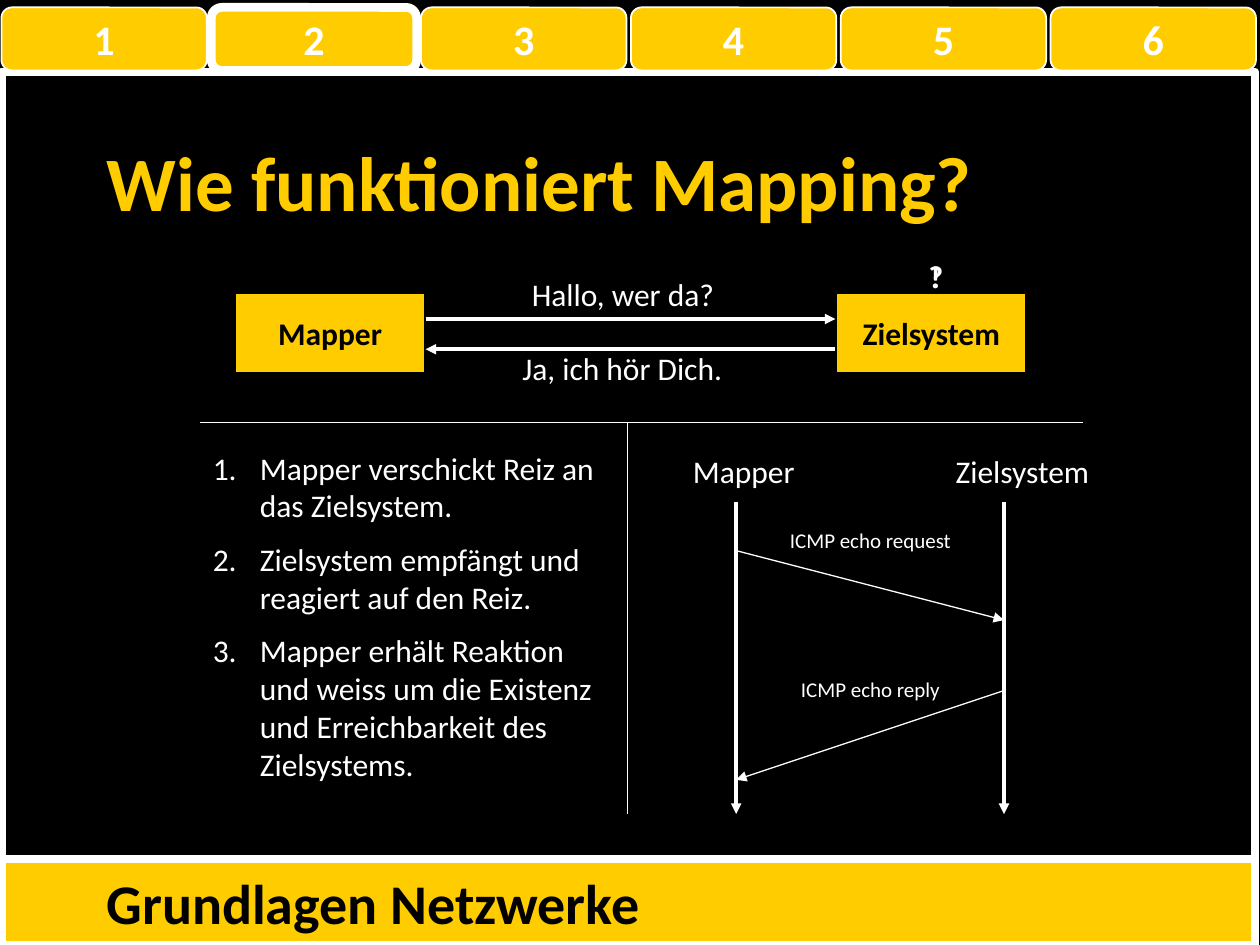
from lxml.etree import SubElement
from pptx import Presentation
from pptx.dml.color import RGBColor
from pptx.enum.shapes import MSO_CONNECTOR, MSO_SHAPE
from pptx.enum.text import MSO_ANCHOR, PP_ALIGN
from pptx.oxml.ns import qn
from pptx.util import Cm, Pt

COLORS = {"black": "000000", "white": "FFFFFF", "yellow": "FFCC00"}
FONT = "Calibri"

# Content; all places in cm: left, top, width, height
TITLE = "Wie funktioniert Mapping?"
FOOTER = "Grundlagen Netzwerke"
TABS = ["1", "2", "3", "4", "5", "6"]
ACTIVE_TAB = "2"
SYSTEMS = [("Mapper", 4.75), ("Zielsystem", 16.87)]
STEPS = [
    "Mapper verschickt Reiz an das Zielsystem.",
    "Zielsystem empfängt und reagiert auf den Reiz.",
    "Mapper erhält Reaktion und weiss um die Existenz "
    "und Erreichbarkeit des Zielsystems.",
]
LABELS = [
    ("Hallo, wer da?", 18, False, (10.26, 5.41, 4.6, 1.02)),
    ("Ja, ich hör Dich.", 18, False, (9.8, 6.91, 5.49, 1.02)),
    ("?", 18, True, (18.47, 5.05, 0.79, 1.02)),
    ("!", 18, True, (18.47, 5.05, 0.79, 1.02)),
    ("Mapper", 18, False, (13.51, 8.99, 2.97, 1.02)),
    ("Zielsystem", 18, False, (18.82, 8.99, 3.58, 1.02)),
    ("ICMP echo request", 12, False, (14.86, 10.52, 5.38, 0.76)),
    ("ICMP echo reply", 12, False, (14.86, 13.51, 5.38, 0.76)),
]
MAPPER_X, TARGET_X = 14.84, 20.24
RULE_Y, LIFELINE_Y, BOTTOM_Y = 8.51, 10.11, 16.41
# start x, start y, end x, end y, line width, arrowhead
LINES = [
    (8.58, 6.43, 16.84, 6.43, 2, True),
    (16.84, 7.04, 8.58, 7.04, 2, True),
    (4.04, RULE_Y, 21.84, RULE_Y, 0.75, False),
    (12.65, RULE_Y, 12.65, BOTTOM_Y, 0.75, False),
    (MAPPER_X, LIFELINE_Y, MAPPER_X, BOTTOM_Y, 2, True),
    (TARGET_X, LIFELINE_Y, TARGET_X, BOTTOM_Y, 2, True),
    (MAPPER_X, 11.1, TARGET_X, 12.5, 0.75, True),
    (TARGET_X, 13.92, MAPPER_X, 15.72, 0.75, True),
]

deck = Presentation()
deck.slide_width, deck.slide_height = Cm(25.4), Cm(19.05)
page = deck.slides.add_slide(deck.slide_layouts[6])


def color(name):
    return RGBColor.from_string(COLORS[name])


def write(shape, *texts, size=18, ink="white", bold=False, align=PP_ALIGN.CENTER,
          anchor=MSO_ANCHOR.TOP, wrap=True, numbered=False):
    frame = shape.text_frame
    frame.word_wrap, frame.vertical_anchor = wrap, anchor
    for index, text in enumerate(texts):
        para = frame.add_paragraph() if index else frame.paragraphs[0]
        para.alignment = align
        span = para.add_run()
        span.text = text
        font = span.font
        font.name, font.size, font.bold = FONT, Pt(size), bold
        font.color.rgb = color(ink)
        if numbered:
            para.space_before = Pt(size / 2)
            props = para._p.get_or_add_pPr()
            props.set("marL", str(Cm(0.95)))
            props.set("indent", str(-Cm(0.95)))
            SubElement(props, qn("a:buFont"), typeface="+mj-lt")
            SubElement(props, qn("a:buAutoNum"), type="arabicPeriod")


def add_box(place, kind=MSO_SHAPE.RECTANGLE, fill="yellow", line="white", width=5):
    box = page.shapes.add_shape(kind, *map(Cm, place))
    box.shadow.inherit = False
    if fill:
        box.fill.solid()
        box.fill.fore_color.rgb = color(fill)
    else:
        box.fill.background()
    box.line.color.rgb = color(line)
    box.line.width = Pt(width)
    return box


def add_label(place, *texts, **style):
    write(page.shapes.add_textbox(*map(Cm, place)), *texts, **style)


def add_line(x1, y1, x2, y2, width, arrow):
    line = page.shapes.add_connector(MSO_CONNECTOR.STRAIGHT, *map(Cm, (x1, y1, x2, y2)))
    line.line.color.rgb = color("white")
    line.line.width = Pt(width)
    if arrow:
        SubElement(line.line._get_or_add_ln(), qn("a:tailEnd"), type="triangle")
    SubElement(line._element.spPr, qn("a:effectLst"))


# Background, frame and title
page.background.fill.solid()
page.background.fill.fore_color.rgb = color("black")
add_box((0.03, 17.32, 25.27, 1.73))
add_box((0.03, 1.45, 25.27, 15.87), fill=None)
add_label((1.9, 2.08, 18.26, 3.12), TITLE, size=44, ink="yellow", bold=True,
          align=PP_ALIGN.LEFT, anchor=MSO_ANCHOR.MIDDLE)

# The two systems
for name, left in SYSTEMS:
    write(add_box((left, 5.92, 3.81, 1.6), line="black", width=0.75), name,
          ink="black", bold=True, anchor=MSO_ANCHOR.MIDDLE, wrap=False)

# Arrows, rules, labels and steps
for line in LINES:
    add_line(*line)
for text, size, bold, place in LABELS:
    add_label(place, text, size=size, bold=bold)
add_label((4.04, 8.92, 8.2, 8.66), *STEPS, align=PP_ALIGN.LEFT, numbered=True)

# Footer and tabs
add_label((1.9, 17.32, 21.59, 1.73), FOOTER, size=32, ink="black", bold=True,
          align=PP_ALIGN.LEFT, anchor=MSO_ANCHOR.MIDDLE)
TAB_PITCH = 4.23
for index, number in enumerate(TABS):
    tab = add_box((0.03 + index * TAB_PITCH, 0.15, 4.14, 1.27),
                  MSO_SHAPE.ROUNDED_RECTANGLE, width=5 if number == ACTIVE_TAB else 1)
    write(tab, number, size=24, bold=True, anchor=MSO_ANCHOR.MIDDLE)

deck.save("out.pptx")
